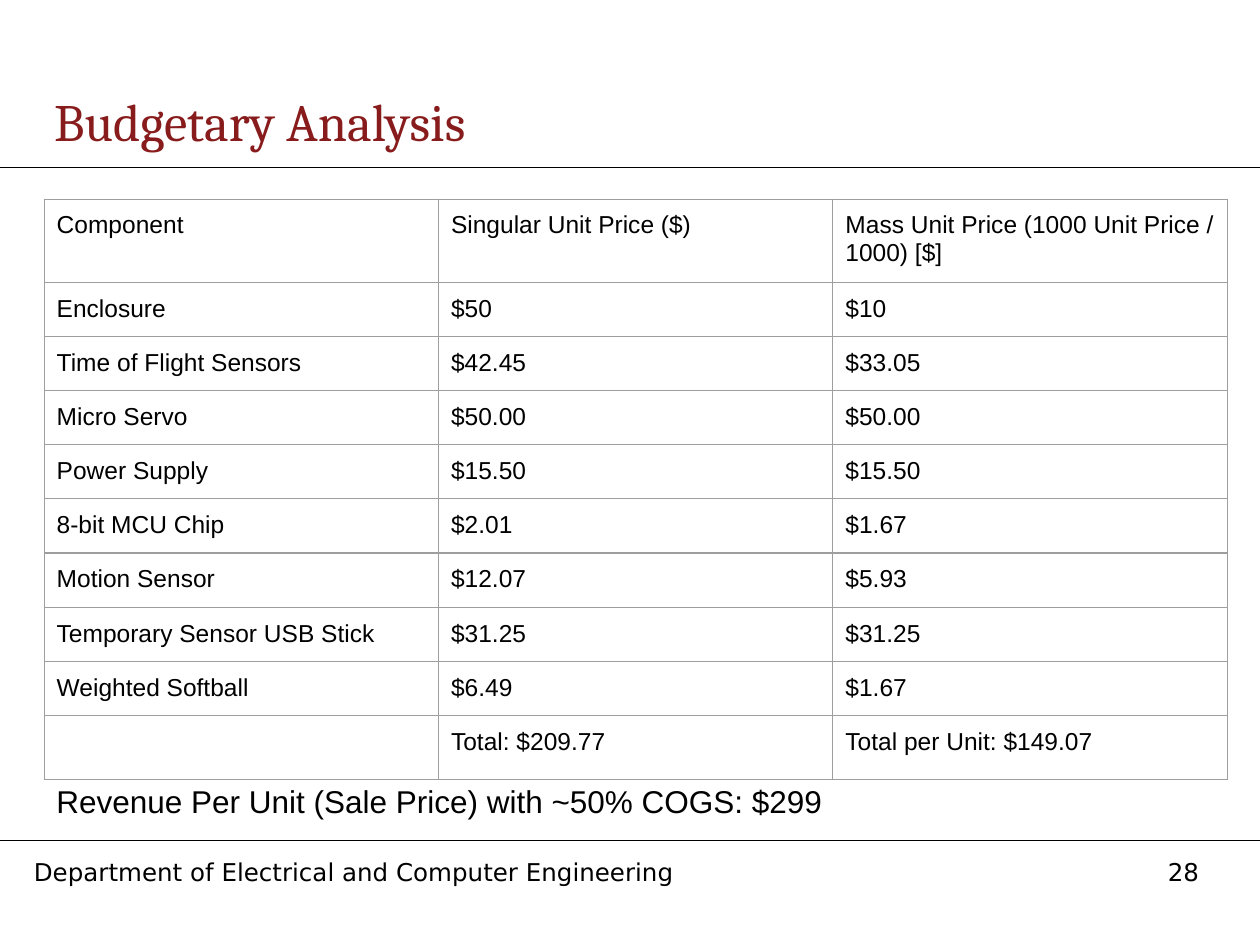
from dataclasses import dataclass

from lxml import etree
from pptx import Presentation
from pptx.dml.color import RGBColor
from pptx.enum.shapes import MSO_CONNECTOR
from pptx.enum.text import MSO_ANCHOR, MSO_AUTO_SIZE, PP_ALIGN
from pptx.oxml.ns import qn
from pptx.util import Inches, Pt

STRAIGHT = MSO_CONNECTOR.STRAIGHT
MIDDLE = MSO_ANCHOR.MIDDLE
NO_AUTOFIT = MSO_AUTO_SIZE.NONE
LEFT = PP_ALIGN.LEFT

BLACK = "000000"
MAROON = "881C1C"
GRID_GRAY = "9E9E9E"
SLIDE_WIDTH, SLIDE_HEIGHT = 10, 7.5
RULE_TOPS = (1.33, 6.67)
TITLE_BOX = (0.33, 0.67, 9.67, 0.58)

COLUMN_WIDTH = 3.13
HEADER_HEIGHT, ITEM_HEIGHT, TOTAL_HEIGHT = 0.66, 0.43, 0.48
TABLE_LEFT, TABLE_TOP = 0.35, 1.58
BUDGET = [
    ("Component", "Singular Unit Price ($)", "Mass Unit Price (1000 Unit Price / 1000) [$]"),
    ("Enclosure", "$50", "$10"),
    ("Time of Flight Sensors", "$42.45", "$33.05"),
    ("Micro Servo", "$50.00", "$50.00"),
    ("Power Supply", "$15.50", "$15.50"),
    ("8-bit MCU Chip", "$2.01", "$1.67"),
    ("Motion Sensor", "$12.07", "$5.93"),
    ("Temporary Sensor USB Stick", "$31.25", "$31.25"),
    ("Weighted Softball", "$6.49", "$1.67"),
    ("", "Total: $209.77", "Total per Unit: $149.07"),
]


@dataclass(frozen=True)
class Caption:
    text: str
    box: tuple[float, float, float, float]
    size: float
    font: str
    inset: float


CAPTIONS = [
    Caption("28", (9.17, 6.75, 0.67, 0.34), 14, "DejaVu Sans", 0.05),
    Caption("Department of Electrical and Computer Engineering",
            (0.17, 6.75, 5.65, 0.33), 14, "DejaVu Sans", 0.05),
    Caption("Revenue Per Unit (Sale Price) with ~50% COGS: $299",
            (0.35, 6.11, 7.83, 0.9), 18, "Arial", 0.1),
]


def rgb(color: str) -> RGBColor:
    return RGBColor.from_string(color)


def set_margins(target, vertical: float) -> None:
    margins = {"margin_left": 0.1, "margin_right": 0.1,
               "margin_top": vertical, "margin_bottom": vertical}
    for side, inches in margins.items():
        setattr(target, side, Inches(inches))


def write(frame, text: str, size: float, font_name: str, color: str = BLACK) -> None:
    paragraph = frame.paragraphs[0]
    paragraph.alignment = LEFT
    run = paragraph.add_run()
    run.text = text
    for attribute, value in {"size": Pt(size), "name": font_name}.items():
        setattr(run.font, attribute, value)
    run.font.color.rgb = rgb(color)


def add_rule(slide, top: float) -> None:
    rule = slide.shapes.add_connector(
        STRAIGHT, Inches(0), Inches(top), Inches(SLIDE_WIDTH), Inches(top))
    rule.line.color.rgb = rgb(BLACK)
    rule.line.width = Pt(1)
    etree.SubElement(rule.element.spPr, qn("a:effectLst"))


def add_title(slide, text: str) -> None:
    title = slide.shapes.title
    title.left, title.top, title.width, title.height = map(Inches, TITLE_BOX)
    frame = title.text_frame
    settings = {"auto_size": NO_AUTOFIT, "vertical_anchor": MIDDLE, "word_wrap": True}
    for attribute, value in settings.items():
        setattr(frame, attribute, value)
    set_margins(frame, 0.1)
    write(frame, text, 30, "Cambria", MAROON)


def add_caption(slide, caption: Caption) -> None:
    frame = slide.shapes.add_textbox(*map(Inches, caption.box)).text_frame
    frame.word_wrap = True
    set_margins(frame, caption.inset)
    write(frame, caption.text, caption.size, caption.font)


def outline_cell(cell) -> None:
    properties = cell._tc.get_or_add_tcPr()
    for position, edge in enumerate(("a:lnL", "a:lnR", "a:lnT", "a:lnB")):
        border = etree.Element(qn(edge), w=str(Pt(0.75)))
        fill = etree.SubElement(border, qn("a:solidFill"))
        etree.SubElement(fill, qn("a:srgbClr"), val=GRID_GRAY)
        properties.insert(position, border)


def add_budget_table(slide) -> None:
    row_count, column_count = len(BUDGET), len(BUDGET[0])
    heights = [HEADER_HEIGHT, *[ITEM_HEIGHT] * (row_count - 2), TOTAL_HEIGHT]
    table = slide.shapes.add_table(
        row_count, column_count, Inches(TABLE_LEFT), Inches(TABLE_TOP),
        Inches(COLUMN_WIDTH * column_count), Inches(sum(heights))).table
    table.first_row = table.horz_banding = False
    for column in table.columns:
        column.width = Inches(COLUMN_WIDTH)
    for row, height, entries in zip(table.rows, heights, BUDGET):
        row.height = Inches(height)
        for cell, entry in zip(row.cells, entries):
            set_margins(cell, 0.1)
            cell.fill.background()
            outline_cell(cell)
            if entry:
                write(cell.text_frame, entry, 14, "Arial")


def main() -> None:
    presentation = Presentation()
    presentation.slide_width = Inches(SLIDE_WIDTH)
    presentation.slide_height = Inches(SLIDE_HEIGHT)
    title_only = presentation.slide_layouts.get_by_name("Title Only")
    slide = presentation.slides.add_slide(title_only)
    for top in RULE_TOPS:
        add_rule(slide, top)
    add_title(slide, "Budgetary Analysis")
    add_budget_table(slide)
    for caption in CAPTIONS:
        add_caption(slide, caption)
    presentation.save("out.pptx")


if __name__ == "__main__":
    main()
